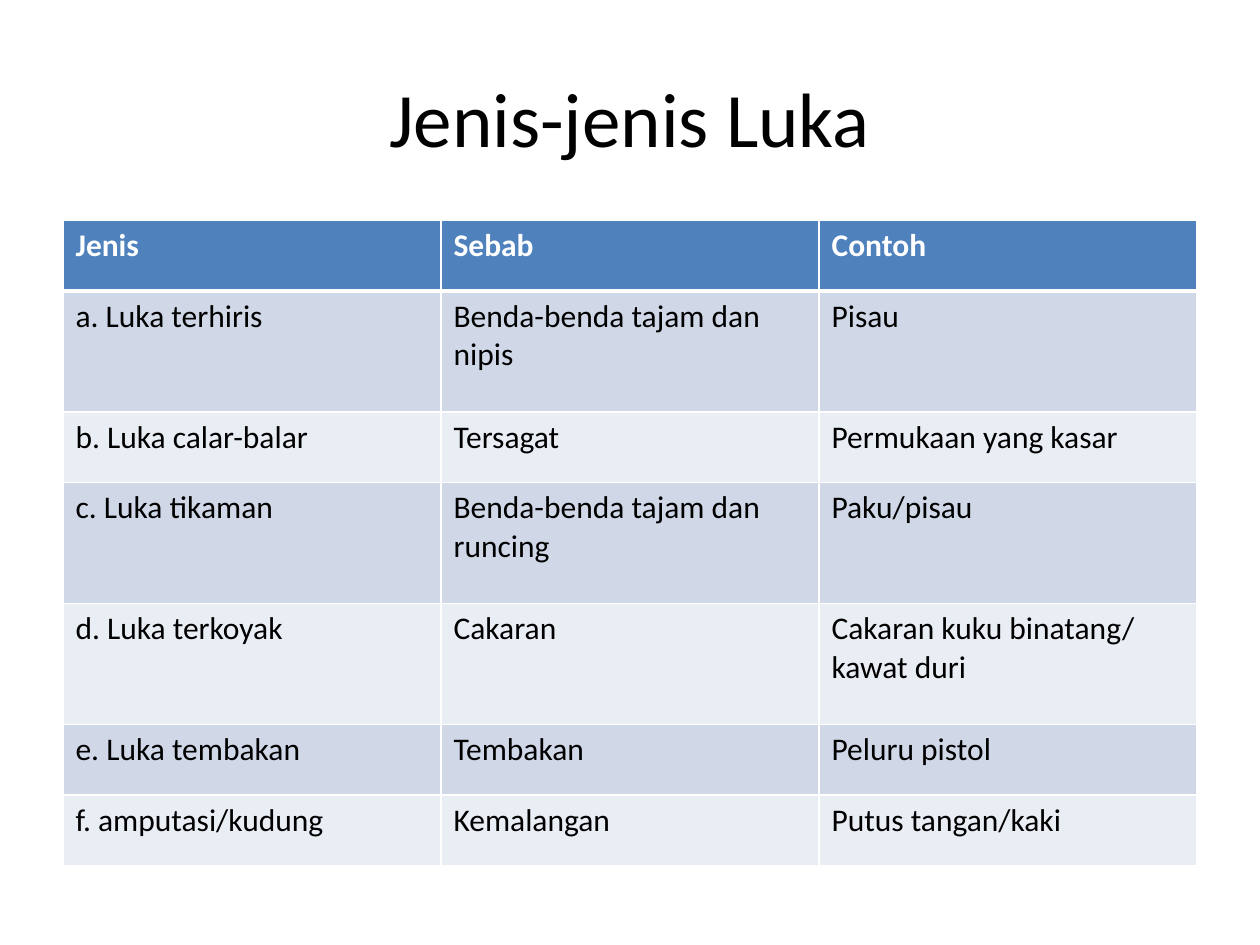
from lxml import etree
from pptx import Presentation
from pptx import util as u
from pptx.dml import color
from pptx.enum import text
from pptx.oxml import ns

COLORS = {"ink": "000000", "white": "FFFFFF", "header": "4F81BD",
          "odd": "D0D8E8", "even": "E9EDF4"}
FONT = "Calibri"
ROWS = [
    ("Jenis", "Sebab", "Contoh"),
    ("a. Luka terhiris", "Benda-benda tajam dan nipis", "Pisau"),
    ("b. Luka calar-balar", "Tersagat", "Permukaan yang kasar"),
    ("c. Luka tikaman", "Benda-benda tajam dan runcing", "Paku/pisau"),
    ("d. Luka terkoyak", "Cakaran", "Cakaran kuku binatang/ kawat duri"),
    ("e. Luka tembakan", "Tembakan", "Peluru pistol"),
    ("f. amputasi/kudung", "Kemalangan", "Putus tangan/kaki"),
]
SHORT, TALL = 0.56, 0.96
HEIGHTS = [SHORT, TALL, SHORT, TALL, TALL, SHORT, SHORT]


def rgb(name):
    """Return the named palette colour."""
    return color.RGBColor.from_string(COLORS[name])


def write(p, words, ink, **formats):
    """Add a run of words with the given font values."""
    r = p.add_run()
    r.text = words
    for key, value in {"name": FONT, **formats}.items():
        setattr(r.font, key, value)
    r.font.color.rgb = rgb(ink)


def add_borders(cell, widths):
    """Give a cell white edges, with widths in points by side."""
    tc_pr = cell._tc.get_or_add_tcPr()
    for side, width in widths.items():
        ln = etree.SubElement(tc_pr, ns.qn(f"a:ln{side}"), w=str(u.Pt(width)))
        fill = etree.SubElement(ln, ns.qn("a:solidFill"))
        etree.SubElement(fill, ns.qn("a:srgbClr"), val=COLORS["white"])


def add_title(s, box, words):
    """Place the centred slide title in the box."""
    tf = s.shapes.add_textbox(*map(u.Inches, box)).text_frame
    for key, value in {"word_wrap": True,
                       "vertical_anchor": text.MSO_ANCHOR.MIDDLE}.items():
        setattr(tf, key, value)
    p = tf.paragraphs[0]
    p.alignment = text.PP_ALIGN.CENTER
    write(p, words, "ink", size=u.Pt(44))


def add_wound_table(s, box, rows, heights):
    """Place the banded table of wound types in the box."""
    table = s.shapes.add_table(len(rows), len(rows[0]),
                               *map(u.Inches, box)).table
    for column in table.columns:
        column.width = u.Inches(box[2] / len(rows[0]))
    for i, (row, height) in enumerate(zip(rows, heights)):
        table.rows[i].height = u.Inches(height)
        is_header = i == 0
        band = "header" if is_header else "odd" if i % 2 else "even"
        edges = {"L": 1, "R": 1, "T": 3 if i == 1 else 1,
                 "B": 3 if is_header else 1}
        for j, words in enumerate(row):
            cell = table.cell(i, j)
            add_borders(cell, edges)
            cell.fill.solid()
            cell.fill.fore_color.rgb = rgb(band)
            write(cell.text_frame.paragraphs[0], words,
                  "white" if is_header else "ink",
                  size=u.Pt(18), bold=is_header)


def main():
    """Build and save the slide."""
    prs = Presentation()
    prs.slide_width, prs.slide_height = u.Inches(10), u.Inches(7.5)
    s = prs.slides.add_slide(prs.slide_layouts[6])
    add_title(s, (0.5, 0.3, 9, 1.25), "Jenis-jenis Luka")
    add_wound_table(s, (0.5, 1.75, 9, sum(HEIGHTS)), ROWS, HEIGHTS)
    prs.save("out.pptx")


if __name__ == "__main__":
    main()
